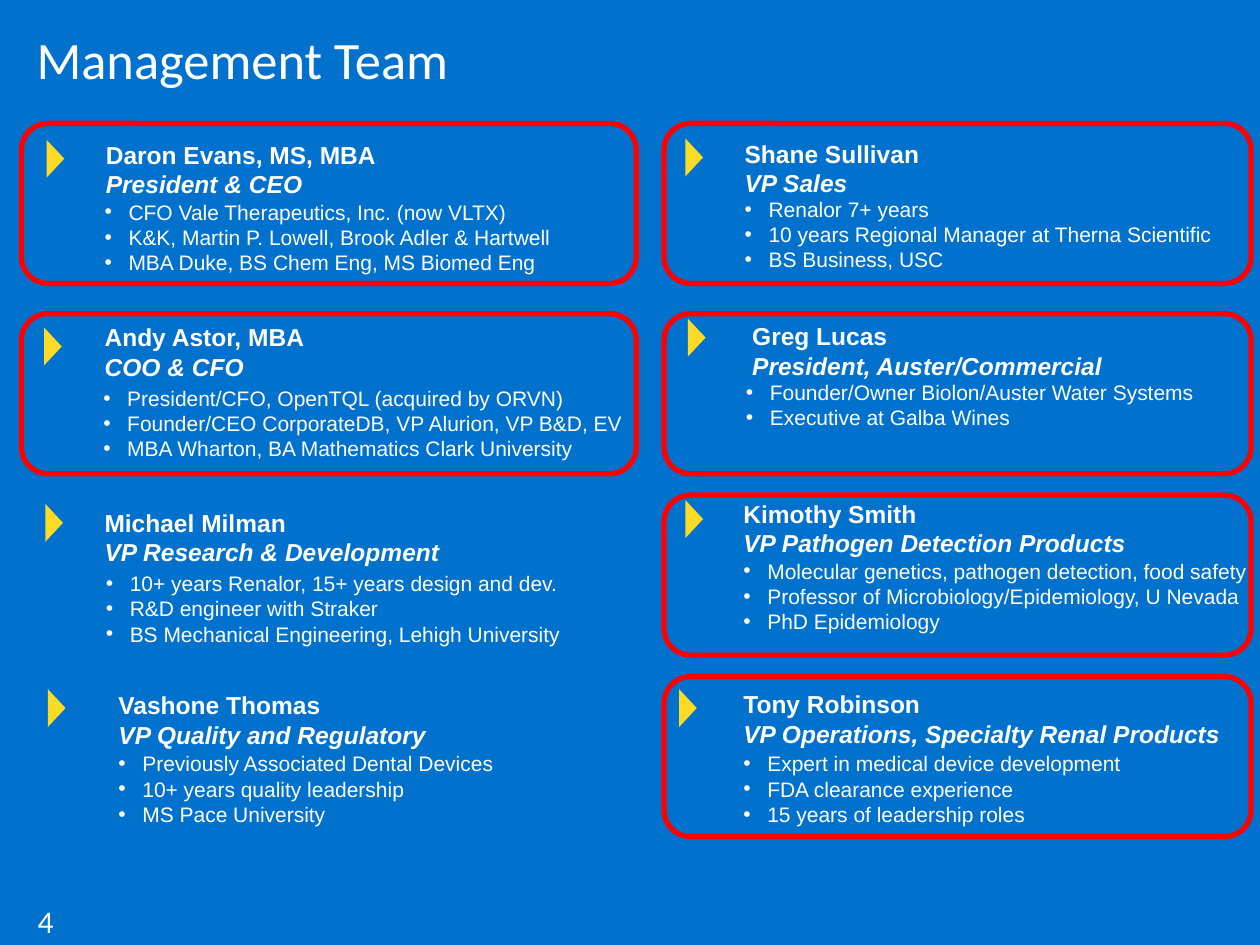
from pptx import Presentation
from pptx.dml.color import RGBColor
from pptx.enum.shapes import MSO_SHAPE
from pptx.enum.text import MSO_ANCHOR
from pptx.util import Inches, Pt
from lxml import etree

TRI, ROUND = MSO_SHAPE.ISOSCELES_TRIANGLE, MSO_SHAPE.ROUNDED_RECTANGLE
TOP, MIDDLE = MSO_ANCHOR.TOP, MSO_ANCHOR.MIDDLE
NS = "http://schemas.openxmlformats.org/drawingml/2006/main"
BLUE, WHITE, GOLD, RED = "0072CE", "FFFFFF", "FDDA24", "FF0000"

COLS = [(0.17, 4.88), (5.27, 4.66)]  # left, width
ROWS = [0.98, 2.49, 3.93, 5.37]
CARD_H = 1.27
LINE_H = 0.2

# column, row, framed, marker (x, y), head (x, y, w), list (x, y, w),
# name, role, facts; offsets are from the corner of the card
TEAM = [
    (0, 0, True, (0.12, 0.21), (0.67, 0.13, 3.63), (0.66, 0.6, 4.29),
     "Daron Evans, MS, MBA", "President & CEO",
     ["CFO Vale Therapeutics, Inc. (now VLTX)",
      "K&K, Martin P. Lowell, Brook Adler & Hartwell",
      "MBA Duke, BS Chem Eng, MS Biomed Eng"]),
    (0, 1, True, (0.1, 0.19), (0.66, 0.07, 3.45), (0.65, 0.57, 4.97),
     "Andy Astor, MBA", "COO & CFO",
     ["President/CFO, OpenTQL (acquired by ORVN)",
      "Founder/CEO CorporateDB, VP Alurion, VP B&D, EV",
      "MBA Wharton, BA Mathematics Clark University"]),
    (0, 2, False, (0.11, 0.15), (0.66, 0.1, 4.07), (0.67, 0.6, 3.63),
     "Michael Milman", "VP Research & Development",
     ["10+ years Renalor, 15+ years design and dev.",
      "R&D engineer with Straker",
      "BS Mechanical Engineering, Lehigh University"]),
    (0, 3, False, (0.13, 0.18), (0.77, 0.11, 4.28), (0.77, 0.59, 4.4),
     "Vashone Thomas", "VP Quality and Regulatory",
     ["Previously Associated Dental Devices",
      "10+ years quality leadership",
      "MS Pace University"]),
    (1, 0, True, (0.09, 0.2), (0.64, 0.12, 3.63), (0.64, 0.58, 4.29),
     "Shane Sullivan", "VP Sales",
     ["Renalor 7+ years",
      "10 years Regional Manager at Therna Scientific",
      "BS Business, USC"]),
    (1, 1, True, (0.11, 0.12), (0.7, 0.06, 2.9), (0.65, 0.52, 4.52),
     "Greg Lucas", "President, Auster/Commercial",
     ["Founder/Owner Biolon/Auster Water Systems",
      "Executive at Galba Wines"]),
    (1, 2, True, (0.09, 0.12), (0.63, 0.03, 3.1), (0.63, 0.5, 4.52),
     "Kimothy Smith", "VP Pathogen Detection Products",
     ["Molecular genetics, pathogen detection, food safety",
      "Professor of Microbiology/Epidemiology, U Nevada",
      "PhD Epidemiology"]),
    (1, 3, True, (0.04, 0.18), (0.63, 0.1, 3.96), (0.63, 0.59, 3.96),
     "Tony Robinson", "VP Operations, Specialty Renal Products",
     ["Expert in medical device development",
      "FDA clearance experience",
      "15 years of leadership roles"]),
]


def color(code):
    return RGBColor.from_string(code)


def add_bullet(para):
    props = para._p.get_or_add_pPr()
    props.set("marL", str(Inches(0.19)))
    props.set("indent", str(-Inches(0.19)))
    etree.SubElement(props, f"{{{NS}}}buFont").set("typeface", "Arial")
    etree.SubElement(props, f"{{{NS}}}buChar").set("char", "•")


def add_text(slide, box, lines, size=12, face="Arial", bold=False,
             slant=(), bullet=False, anchor=TOP, pad=(0, 0), space=None):
    """Write one paragraph per line; slant holds the italic line numbers."""
    frame = slide.shapes.add_textbox(*map(Inches, box)).text_frame
    frame.word_wrap = True
    frame.vertical_anchor = anchor
    frame.margin_left = frame.margin_right = Inches(pad[0])
    frame.margin_top = frame.margin_bottom = Inches(pad[1])
    for i, line in enumerate(lines):
        para = frame.paragraphs[0] if i == 0 else frame.add_paragraph()
        if bullet:
            add_bullet(para)
        if space:
            para.line_spacing = space
        run = para.add_run()
        run.text = line
        font = run.font
        font.size, font.name = Pt(size), face
        font.bold, font.italic = bold, i in slant
        font.color.rgb = color(WHITE)


def add_marker(slide, left, top):
    mark = slide.shapes.add_shape(
        TRI, *map(Inches, (left, top, 0.3, 0.14)))
    mark.rotation = 90
    mark.shadow.inherit = False
    mark.fill.solid()
    mark.fill.fore_color.rgb = color(GOLD)
    mark.line.fill.background()


def add_frame(slide, box):
    frame = slide.shapes.add_shape(ROUND, *map(Inches, box))
    frame.shadow.inherit = False
    frame.fill.background()
    frame.line.color.rgb = color(RED)
    frame.line.width = Pt(3)


def add_card(slide, box, framed, mark, head, body, name, role, facts):
    left, top = box[:2]
    add_text(slide, (left + head[0], top + head[1], head[2], 0.47),
             [name, role], size=14, bold=True, slant=(1,))
    add_text(slide, (left + body[0], top + body[1], body[2],
                     LINE_H * len(facts)), facts, bullet=True)
    add_marker(slide, left + mark[0], top + mark[1])
    if framed:
        add_frame(slide, box)


def main():
    deck = Presentation()
    deck.slide_width, deck.slide_height = Inches(10), Inches(7.5)
    slide = deck.slides.add_slide(deck.slide_layouts[6])
    slide.background.fill.solid()
    slide.background.fill.fore_color.rgb = color(BLUE)

    add_text(slide, (0.29, 0.27, 8.53, 0.45), ["Management Team"],
             size=30, face="Calibri", anchor=MIDDLE, space=0.9)
    for col, row, *parts in TEAM:
        left, width = COLS[col]
        add_card(slide, (left, ROWS[row], width, CARD_H), *parts)
    add_text(slide, (0.2, 7.11, 0.29, 0.2), ["4"],
             size=18, face="Calibri", pad=(0.1, 0.05))
    deck.save("out.pptx")


if __name__ == "__main__":
    main()
